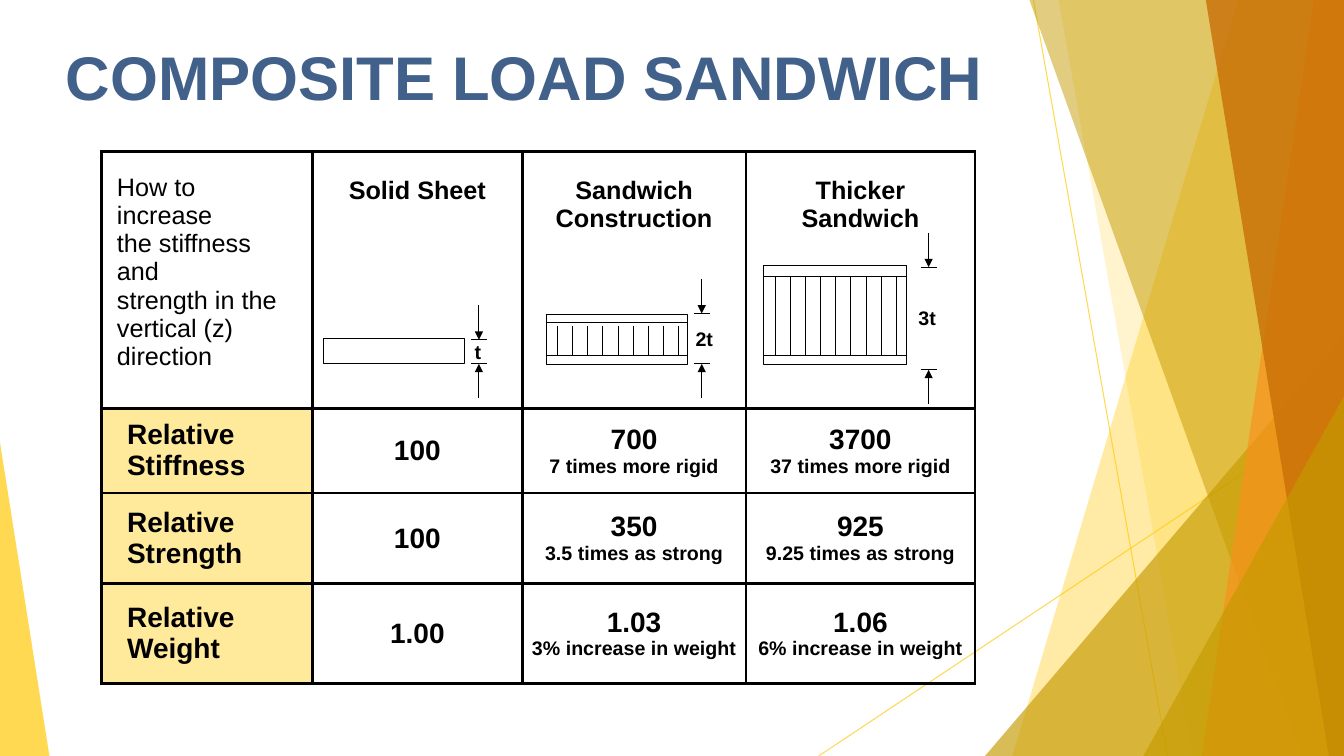
"""Build the slide comparing solid sheet and sandwich constructions."""
from lxml.etree import SubElement
from pptx import Presentation
from pptx.dml.color import RGBColor
from pptx.enum.shapes import MSO_CONNECTOR, MSO_SHAPE
from pptx.enum.text import MSO_ANCHOR, PP_ALIGN
from pptx.oxml import parse_xml
from pptx.oxml.ns import nsdecls, qn
from pptx.util import Inches, Pt

TITLE = "COMPOSITE LOAD SANDWICH"
QUESTION = ["How to increase", "the stiffness and", "strength in the", "vertical (z) direction"]
CONSTRUCTIONS = ["Solid Sheet", "Sandwich Construction", "Thicker Sandwich"]
PROPERTIES = [
    ("Relative Stiffness", ["100"], ["700", "7 times more rigid"], ["3700", "37 times more rigid"]),
    ("Relative Strength", ["100"], ["350", "3.5 times as strong"], ["925", "9.25 times as strong"]),
    ("Relative Weight", ["1.00"], ["1.03", "3% increase in weight"], ["1.06", "6% increase in weight"]),
]
COLUMN_EDGES = [1.01, 3.1, 5.18, 7.4, 9.67]
ROW_EDGES = [1.5, 4.05, 4.89, 5.79, 6.78]

SKETCHES = [
    {"sheet": (3.21, 3.36, 1.4, 0.25), "faces": [], "core": None,
     "gauge": (4.75, 3.37, 3.61), "label": ("t", 4.61)},
    {"sheet": (5.42, 3.12, 1.4, 0.5), "faces": [3.2, 3.53], "core": (5.53, 3.23),
     "gauge": (6.96, 3.11, 3.61), "label": ("2t", 6.8)},
    {"sheet": (7.57, 2.63, 1.42, 0.99), "faces": [2.74, 3.53], "core": (7.69, 2.74),
     "gauge": (9.21, 2.65, 3.67), "label": ("3t", 9.01)},
]
CORE_WALLS, CORE_PITCH, ARROW, TICK = 9, 0.15, 0.34, 0.08

COLORS = {"title": "41608A", "ink": "000000", "label": "FFEA9C",
          "yellow": "FFCA08", "gold": "C59A00", "orange": "F8931D", "rust": "C96F06"}
FONT = "Arial"
WIDTH, HEIGHT = 13.33, 7.5
RAYS = [(10.25, 0, 11.58, HEIGHT), (WIDTH, 4.03, 8.12, HEIGHT)]
FACETS = [
    ("panel", (12.28, 10.04), "yellow", 36),
    ("panel", (10.5, 11.83), "yellow", 20),
    ("triangle", (9.77, 3.33, 3.56, 1), "gold", 66),
    ("panel", (10.21, 12.91), "gold", 50),
    ("panel", (13.03, 11.92), "orange", 70),
    ("panel", (11.96, 13.18), "rust", 80),
    ("triangle", (11.34, 3.93, 1.99, 1), "gold", 66),
    ("triangle", (0, 4.39, 0.49, 0), "yellow", 70),
]


def rgb(name):
    return RGBColor.from_string(COLORS[name])


def set_alpha(color_parent, percent):
    color = color_parent.find(".//" + qn("a:srgbClr"))
    SubElement(color, qn("a:alpha"), val=str(percent * 1000))


def write(frame, lines, align=PP_ALIGN.LEFT, color="ink"):
    """Write (text, size, bold) lines, one paragraph each."""
    frame.word_wrap = True
    for index, (text, size, bold) in enumerate(lines):
        paragraph = frame.add_paragraph() if index else frame.paragraphs[0]
        paragraph.alignment = align
        run = paragraph.add_run()
        run.text = text
        run.font.name, run.font.size, run.font.bold = FONT, Pt(size), bold
        run.font.color.rgb = rgb(color)


def add_line(slide, start, end, color="ink", arrow=False):
    line = slide.shapes.add_connector(
        MSO_CONNECTOR.STRAIGHT, *[Inches(v) for v in (*start, *end)])
    line.line.color.rgb = rgb(color)
    line.line.width = Pt(0.75)
    properties = line._element.spPr
    if arrow:
        SubElement(properties.find(qn("a:ln")), qn("a:tailEnd"), type="triangle")
    SubElement(properties, qn("a:effectLst"))
    return line


def add_backdrop(slide):
    for x1, y1, x2, y2 in RAYS:
        ray = add_line(slide, (x1, y1), (x2, y2), "yellow")
        set_alpha(ray._element.spPr, 70)
    for kind, place, color, opacity in FACETS:
        if kind == "panel":
            top, bottom = place
            outline = slide.shapes.build_freeform(Inches(top), 0)
            corners = [(WIDTH, 0), (WIDTH, HEIGHT), (bottom, HEIGHT)]
            outline.add_line_segments([(Inches(x), Inches(y)) for x, y in corners])
            facet = outline.convert_to_shape()
        else:
            left, top, width, apex = place
            facet = slide.shapes.add_shape(
                MSO_SHAPE.ISOSCELES_TRIANGLE,
                *[Inches(v) for v in (left, top, width, HEIGHT - top)])
            facet.adjustments[0] = apex
        facet.shadow.inherit = False
        facet.line.fill.background()
        facet.fill.solid()
        facet.fill.fore_color.rgb = rgb(color)
        set_alpha(facet._element.spPr, opacity)


def fill_cell(cell, lines, align, anchor, margins, fill=None):
    write(cell.text_frame, lines, align)
    cell.vertical_anchor = anchor
    side, top = margins
    cell.margin_left = cell.margin_right = Inches(side)
    cell.margin_top, cell.margin_bottom = Inches(top), 0
    if fill:
        cell.fill.solid()
        cell.fill.fore_color.rgb = rgb(fill)
    else:
        cell.fill.background()
    for index, edge in enumerate(("lnL", "lnR", "lnT", "lnB")):
        border = parse_xml(
            f'<a:{edge} {nsdecls("a")} w="{Pt(2.25)}"><a:solidFill>'
            f'<a:srgbClr val="{COLORS["ink"]}"/></a:solidFill></a:{edge}>')
        cell._tc.get_or_add_tcPr().insert(index, border)


def add_comparison(slide):
    left, top = COLUMN_EDGES[0], ROW_EDGES[0]
    table = slide.shapes.add_table(
        len(ROW_EDGES) - 1, len(COLUMN_EDGES) - 1, Inches(left), Inches(top),
        Inches(COLUMN_EDGES[-1] - left), Inches(ROW_EDGES[-1] - top)).table
    table.first_row = table.horz_banding = False
    for column, start, end in zip(table.columns, COLUMN_EDGES, COLUMN_EDGES[1:]):
        column.width = Inches(end - start)
    for row, start, end in zip(table.rows, ROW_EDGES, ROW_EDGES[1:]):
        row.height = Inches(end - start)

    fill_cell(table.cell(0, 0), [(text, 18, False) for text in QUESTION],
              PP_ALIGN.LEFT, MSO_ANCHOR.TOP, (0.15, 0.22))
    for column, construction in enumerate(CONSTRUCTIONS, 1):
        fill_cell(table.cell(0, column), [(construction, 18, True)],
                  PP_ALIGN.CENTER, MSO_ANCHOR.TOP, (0.3, 0.25))
    for row, (label, *results) in enumerate(PROPERTIES, 1):
        fill_cell(table.cell(row, 0), [(label, 20, True)],
                  PP_ALIGN.LEFT, MSO_ANCHOR.MIDDLE, (0.25, 0), "label")
        for column, result in enumerate(results, 1):
            lines = [(text, size, True) for text, size in zip(result, (20, 14))]
            fill_cell(table.cell(row, column), lines,
                      PP_ALIGN.CENTER, MSO_ANCHOR.MIDDLE, (0.05, 0))


def add_sketch(slide, sketch):
    left, top, width, height = sketch["sheet"]
    sheet = slide.shapes.add_shape(
        MSO_SHAPE.RECTANGLE, *[Inches(v) for v in sketch["sheet"]])
    sheet.shadow.inherit = False
    sheet.fill.background()
    sheet.line.color.rgb = rgb("ink")
    sheet.line.width = Pt(0.75)
    for face in sketch["faces"]:
        add_line(slide, (left, face), (left + width, face))
    if sketch["core"]:
        first, core_top = sketch["core"]
        for wall in range(CORE_WALLS):
            x = first + wall * CORE_PITCH
            add_line(slide, (x, core_top), (x, sketch["faces"][-1]))

    x, upper, lower = sketch["gauge"]
    for level, tail in ((upper, upper - ARROW), (lower, lower + ARROW)):
        add_line(slide, (x - TICK, level), (x + TICK, level))
        add_line(slide, (x, tail), (x, level), arrow=True)
    thickness, label_left = sketch["label"]
    label = slide.shapes.add_textbox(
        *[Inches(v) for v in (label_left, (upper + lower) / 2 - 0.17, 0.42, 0.34)])
    write(label.text_frame, [(thickness, 14, True)])


def main():
    deck = Presentation()
    deck.slide_width, deck.slide_height = Inches(WIDTH), Inches(HEIGHT)
    slide = deck.slides.add_slide(deck.slide_layouts[5])
    add_backdrop(slide)
    title = slide.shapes.title
    title.left, title.top, title.width, title.height = [
        Inches(v) for v in (0.18, 0.32, 10.05, 0.86)]
    title.text_frame.vertical_anchor = MSO_ANCHOR.MIDDLE
    write(title.text_frame, [(TITLE, 44, True)], PP_ALIGN.CENTER, "title")
    add_comparison(slide)
    for sketch in SKETCHES:
        add_sketch(slide, sketch)
    deck.save("out.pptx")


if __name__ == "__main__":
    main()
